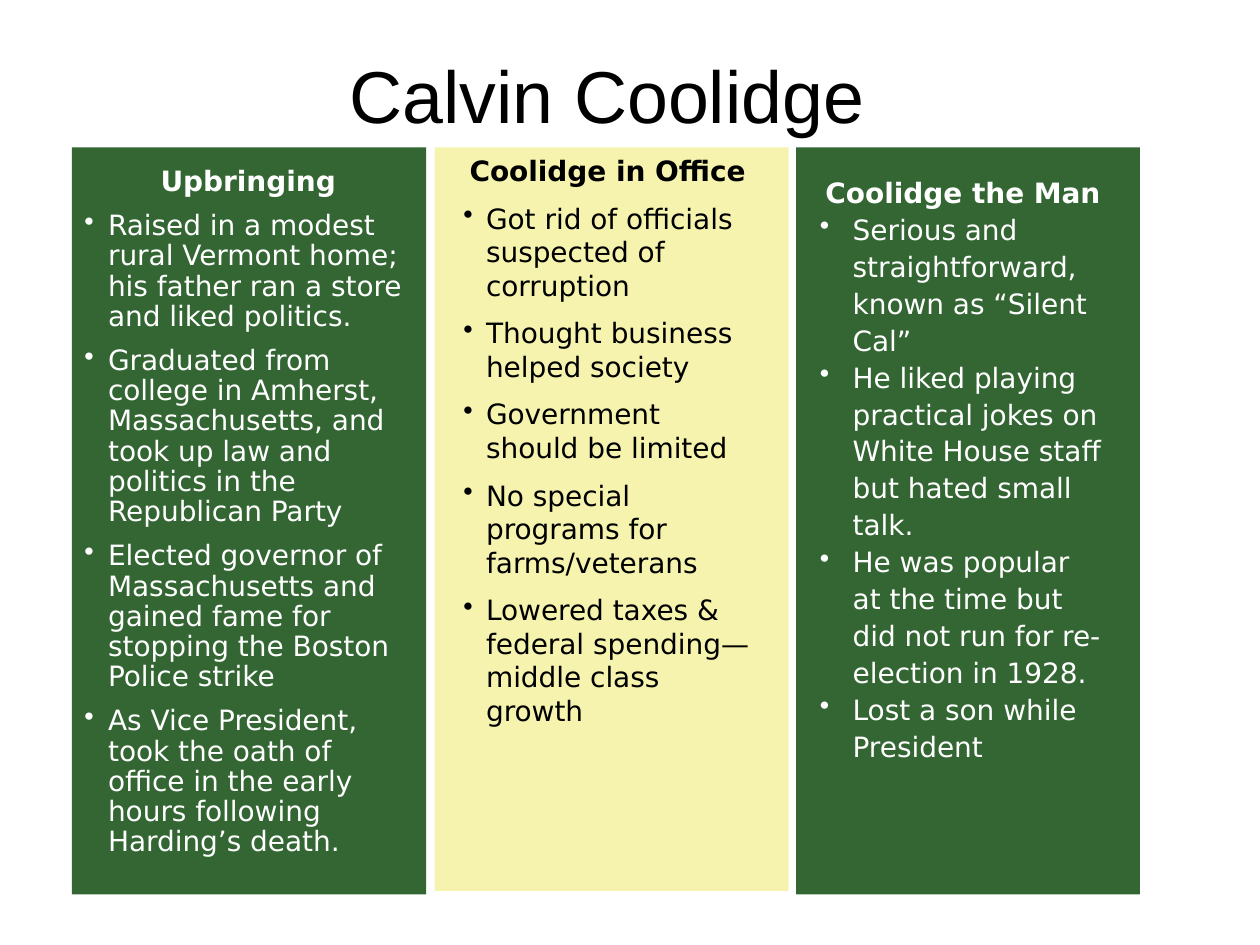
from dataclasses import dataclass

from lxml import etree
from pptx import Presentation
from pptx.dml.color import RGBColor
from pptx.enum.shapes import MSO_SHAPE
from pptx.enum.text import MSO_ANCHOR, MSO_AUTO_SIZE, PP_ALIGN
from pptx.oxml.ns import qn
from pptx.util import Cm, Pt

RECTANGLE = MSO_SHAPE.RECTANGLE
CENTER, LEFT = PP_ALIGN.CENTER, PP_ALIGN.LEFT
TOP, MIDDLE = MSO_ANCHOR.TOP, MSO_ANCHOR.MIDDLE
FIT_SHAPE, NO_FIT = MSO_AUTO_SIZE.SHAPE_TO_FIT_TEXT, MSO_AUTO_SIZE.NONE

GREEN = RGBColor(0x33, 0x66, 0x33)
YELLOW = RGBColor(0xF5, 0xF3, 0xAD)
WHITE = RGBColor(0xFF, 0xFF, 0xFF)
BLACK = RGBColor(0x00, 0x00, 0x00)

TITLE_ONLY = 5
PANEL_TOP = 2.97

# Boxes are left, top, width, height in centimetres
COLUMNS = [
    dict(
        heading="Coolidge in Office",
        points=[
            "Got rid of officials suspected of corruption",
            "Thought business helped society",
            "Government should be limited",
            "No special programs for farms/veterans",
            "Lowered taxes & federal spending—middle class growth",
        ],
        panel=(8.76, PANEL_TOP, 7.14, 14.99),
        text_box=(9.09, PANEL_TOP, 6.32, 15.44),
        fill=YELLOW, color=BLACK, indent=0.46, line_spacing=1.0, gap=8,
    ),
    dict(
        heading="Coolidge the Man",
        points=[
            "Serious and straightforward, known as “Silent Cal”",
            "He liked playing practical jokes on White House staff but hated small talk.",
            "He was popular at the time but did not run for re-election in 1928.",
            "Lost a son while President",
        ],
        panel=(16.05, PANEL_TOP, 6.93, 15.06),
        text_box=(16.28, 3.35, 6.27, 13.06),
        fill=GREEN, color=WHITE, indent=0.66, line_spacing=1.1, gap=0,
    ),
    dict(
        heading="Upbringing",
        points=[
            "Raised in a modest rural Vermont home; his father ran a store and liked politics.",
            "Graduated from college in Amherst, Massachusetts, and took up law and politics "
            "in the Republican Party",
            "Elected governor of Massachusetts and gained fame for stopping the Boston "
            "Police strike",
            "As Vice President, took the oath of office in the early hours following "
            "Harding’s death.",
        ],
        panel=(1.45, PANEL_TOP, 7.14, 15.06),
        text_box=(1.45, 3.25, 7.11, 14.55),
        fill=GREEN, color=WHITE, indent=0.48, line_spacing=0.9, gap=8,
    ),
]


def write_text(paragraph, text, *, font, size, color, bold=False, align=LEFT,
               indent=0, bullet=None, line_spacing=1.0, space_before=0):
    """Fill one paragraph with formatted text and a hanging indent."""
    properties = paragraph._p.get_or_add_pPr()
    if indent:
        properties.set("marL", str(Cm(indent)))
        properties.set("indent", str(-Cm(indent)))
    if bullet:
        etree.SubElement(properties, qn("a:buChar"), char=bullet)
    paragraph.alignment = align
    paragraph.line_spacing = line_spacing
    paragraph.space_before = Pt(space_before)
    run = paragraph.add_run()
    run.text = text
    run.font.name = font
    run.font.size = Pt(size)
    run.font.bold = bold
    run.font.color.rgb = color


@dataclass
class SlideBuilder:
    slide: object
    title_font: str = "Arial"
    title_size: int = 42
    body_font: str = "DejaVu Sans"
    body_size: int = 16

    def title(self, text, box):
        shape = self.slide.shapes.title
        shape.left, shape.top, shape.width, shape.height = map(Cm, box)
        frame = shape.text_frame
        frame.vertical_anchor = MIDDLE
        frame.auto_size = NO_FIT
        write_text(frame.paragraphs[0], text, font=self.title_font,
                   size=self.title_size, color=BLACK, align=CENTER)

    def panel(self, group, box, fill):
        shape = group.shapes.add_shape(RECTANGLE, *map(Cm, box))
        shape.shadow.inherit = False
        shape.fill.solid()
        shape.fill.fore_color.rgb = fill
        shape.line.fill.background()

    def bullet_list(self, group, box, heading, points, gap, **style):
        frame = group.shapes.add_textbox(*map(Cm, box)).text_frame
        frame.word_wrap = True
        frame.vertical_anchor = TOP
        frame.auto_size = FIT_SHAPE
        style.update(font=self.body_font, size=self.body_size)
        write_text(frame.paragraphs[0], heading, bold=True, align=CENTER, **style)
        for point in points:
            write_text(frame.add_paragraph(), point, bullet="•",
                       space_before=gap, **style)

    def column(self, panel, text_box, fill, **content):
        group = self.slide.shapes.add_group_shape()
        self.panel(group, panel, fill)
        self.bullet_list(group, text_box, **content)


def main():
    presentation = Presentation()
    presentation.slide_width, presentation.slide_height = Cm(25.4), Cm(19.05)
    layout = presentation.slide_layouts[TITLE_ONLY]
    builder = SlideBuilder(presentation.slides.add_slide(layout))

    # Title
    builder.title("Calvin Coolidge", (1.02, 0.84, 22.43, 2.11))

    # Three columns, each a coloured panel with its list
    for column in COLUMNS:
        builder.column(**column)

    presentation.save("out.pptx")


if __name__ == "__main__":
    main()
